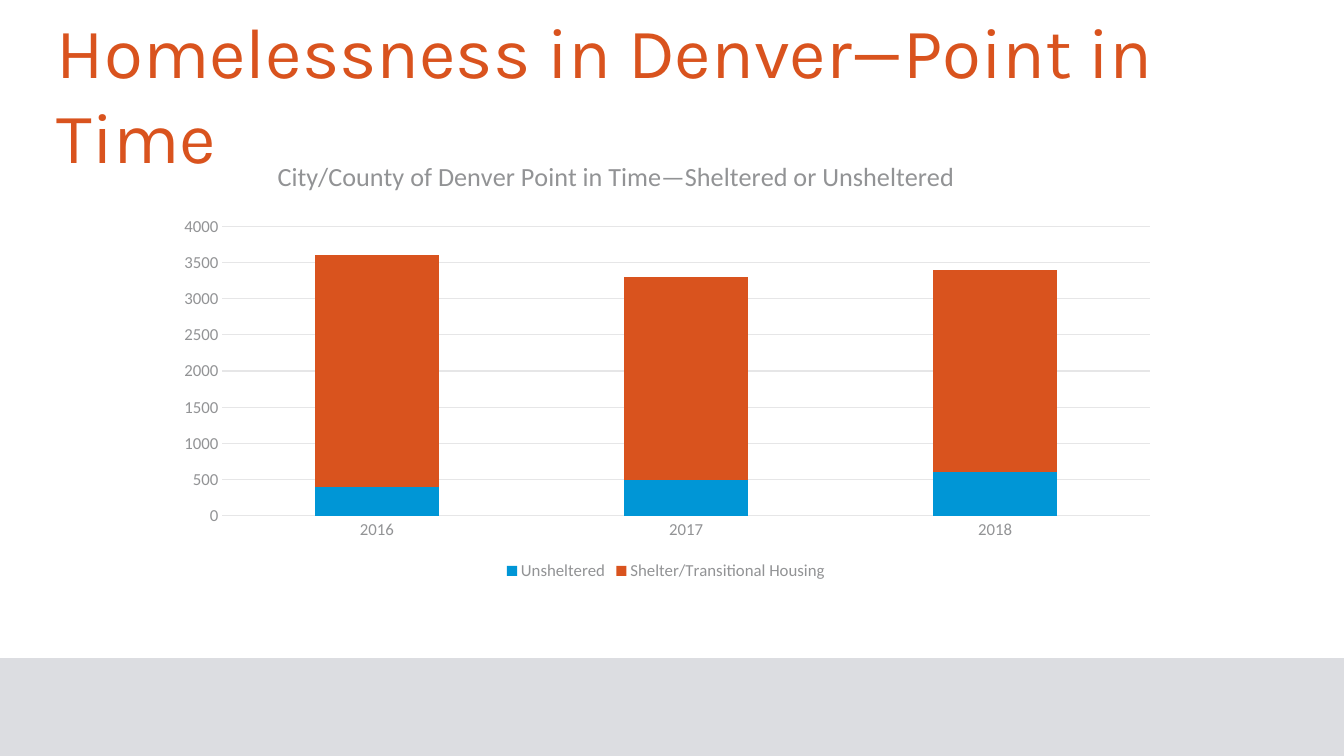
"""Builds a slide with a stacked column chart of homelessness counts in Denver."""
from lxml import etree
from pptx import Presentation
from pptx.chart.data import CategoryChartData
from pptx.dml.color import RGBColor
from pptx.enum.chart import XL_CHART_TYPE, XL_LEGEND_POSITION, XL_TICK_MARK
from pptx.enum.shapes import MSO_SHAPE
from pptx.enum.text import MSO_ANCHOR
from pptx.oxml.ns import qn
from pptx.util import Pt

PX = 914400 / 100.8
ORANGE = RGBColor(0xD9, 0x53, 0x1E)
BLUE = RGBColor(0x00, 0x96, 0xD6)
GREY = RGBColor(0x92, 0x93, 0x95)
RULE = RGBColor(0xE6, 0xE6, 0xE7)
BAND = RGBColor(0xDC, 0xDD, 0xE1)
STACKED = XL_CHART_TYPE.COLUMN_STACKED
NO_TICKS = XL_TICK_MARK.NONE
BOTTOM = XL_LEGEND_POSITION.BOTTOM
RECTANGLE = MSO_SHAPE.RECTANGLE
MIDDLE = MSO_ANCHOR.MIDDLE


def px(*lengths):
    return [round(length * PX) for length in lengths]


def set_layout(parent, **settings):
    layout = parent.find(qn("c:layout"))
    if layout is None:
        layout = etree.Element(qn("c:layout"))
        text = parent.find(qn("c:tx"))
        parent.insert(0 if text is None else 1, layout)
    manual = etree.SubElement(layout, qn("c:manualLayout"))
    for name, value in settings.items():
        etree.SubElement(manual, qn(f"c:{name}")).set("val", str(value))


deck = Presentation()
deck.slide_width, deck.slide_height = px(1344, 756)
page = deck.slides.add_slide(deck.slide_layouts[6])

band = page.shapes.add_shape(RECTANGLE, *px(0, 658, 1344, 98))
band.shadow.inherit = False
band.fill.solid()
band.fill.fore_color.rgb = BAND
band.line.fill.background()

heading = page.shapes.add_textbox(*px(47, 0, 1240, 185))
heading.text_frame.word_wrap = True
heading.text_frame.vertical_anchor = MIDDLE
span = heading.text_frame.paragraphs[0].add_run()
span.text = "Homelessness in Denver—Point in Time"
span.font.name = "Karla"
span.font.size = Pt(50.7)
span.font.color.rgb = ORANGE

counts = CategoryChartData()
counts.categories = ["2016", "2017", "2018"]
counts.add_series("Unsheltered", [400, 500, 600])
counts.add_series("Shelter/Transitional Housing", [3200, 2800, 2800])
chart = page.shapes.add_chart(STACKED, *px(162, 153, 1008, 432), counts).chart
chart.font.name = "Calibri"
chart.font.size = Pt(12)
chart.font.color.rgb = GREY

plot = chart.plots[0]
plot.gap_width = 150
plot.overlap = 100
plot.vary_by_categories = False
for series, color in zip(plot.series, [BLUE, ORANGE]):
    series.format.fill.solid()
    series.format.fill.fore_color.rgb = color

years, people = chart.category_axis, chart.value_axis
for axis in (years, people):
    axis.major_tick_mark = NO_TICKS
    axis.minor_tick_mark = NO_TICKS
people.minimum_scale = 0
people.maximum_scale = 4000
people.major_unit = 500
people.format.line.fill.background()
for line in (years.format.line, people.major_gridlines.format.line):
    line.color.rgb = RULE
    line.width = Pt(0.75)

chart.has_legend = True
chart.legend.position = BOTTOM
chart.legend.include_in_layout = False

caption = chart.chart_title
span = caption.text_frame.paragraphs[0].add_run()
span.text = "City/County of Denver Point in Time—Sheltered or Unsheltered"
span.font.name = "Calibri"
span.font.size = Pt(18.7)
span.font.bold = False
span.font.color.rgb = GREY
caption.include_in_layout = False

title_xml = chart._chartSpace.chart.find(qn("c:title"))
plot_xml = chart._chartSpace.chart.plotArea
set_layout(title_xml, xMode="edge", yMode="edge", x=0.11, y=0)
set_layout(plot_xml, layoutTarget="inner", xMode="edge", yMode="edge",
           x=0.06, y=0.17, w=0.92, h=0.67)

deck.save("out.pptx")
